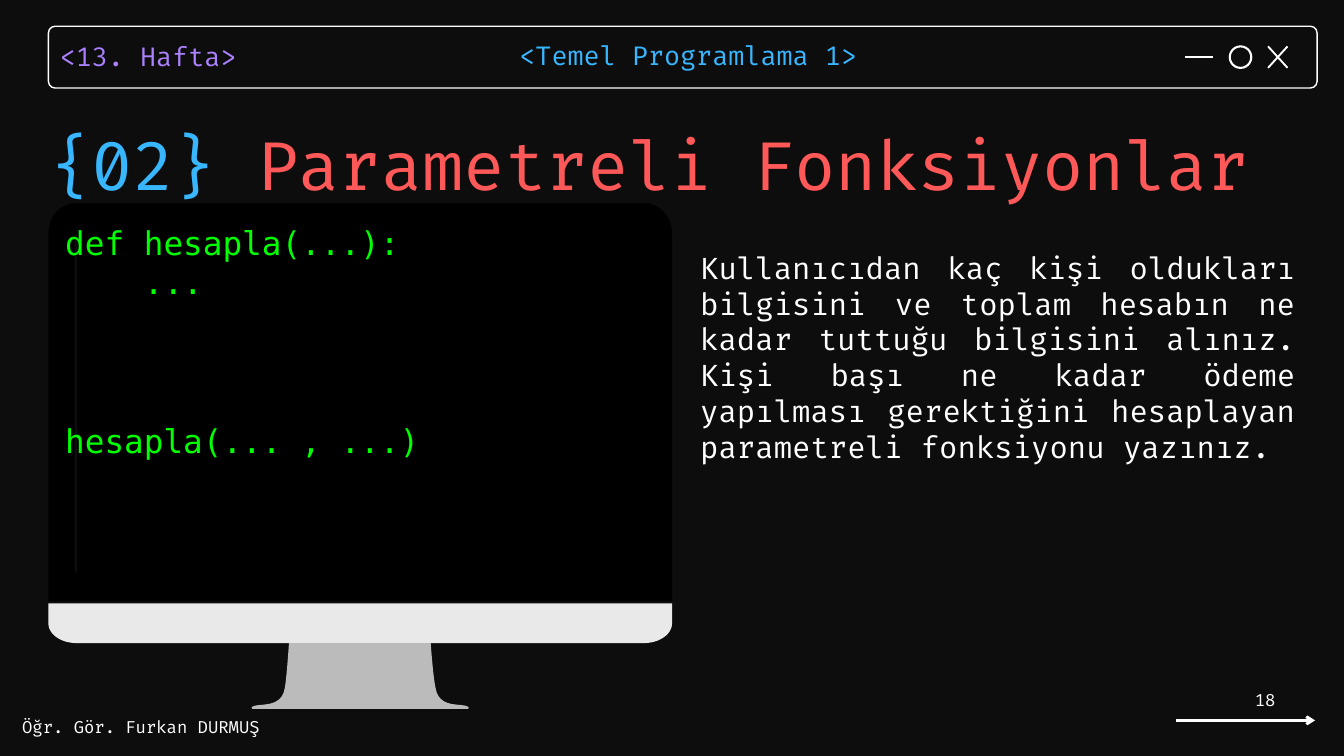
import pptx
import pptx.dml.color
import pptx.enum.shapes
import pptx.enum.text
import pptx.oxml
import pptx.oxml.ns
import pptx.util

Inches = pptx.util.Inches
Pt = pptx.util.Pt
RGBColor = pptx.dml.color.RGBColor
Shape = pptx.enum.shapes.MSO_SHAPE
Align = pptx.enum.text.PP_ALIGN
Anchor = pptx.enum.text.MSO_ANCHOR

NIGHT = RGBColor(0x0D, 0x0D, 0x0D)
BLACK = RGBColor(0, 0, 0)
WHITE = RGBColor(0xFF, 0xFF, 0xFF)
PURPLE = RGBColor(0xAB, 0x81, 0xFF)
BLUE = RGBColor(0x38, 0xB6, 0xFF)
RED = RGBColor(0xFF, 0x58, 0x58)
GREEN = RGBColor(0, 0xFF, 0)
SILVER = RGBColor(0xE9, 0xE9, 0xE9)
GREY = RGBColor(0xBB, 0xBB, 0xBB)

TEXT_FONT = "Fira Code"
CODE_FONT = "DejaVu Sans Mono"
CURVE_STEPS = 12

BEZEL = [
    [(9.58, 3.02), (1.14, 3.02), (0.91, 3.02, 0.72, 3.22, 0.72, 3.47),
     (0.72, 8.95), (10, 8.95), (10, 3.47), (10, 3.22, 9.81, 3.02, 9.58, 3.02)],
    [(9.6, 8.52), (1.11, 8.52), (1.11, 3.49), (9.6, 3.49)],
]
CHIN = [
    [(0.72, 9.28), (0.72, 9.44, 0.91, 9.57, 1.14, 9.57), (9.58, 9.57),
     (9.81, 9.57, 10, 9.44, 10, 9.28), (10, 8.98), (0.72, 8.98)],
]
STAND = [
    [(6.41, 9.57), (4.3, 9.57), (4.3, 9.57, 4.27, 10.03, 4.24, 10.23),
     (4.19, 10.56, 3.85, 10.45, 3.75, 10.52),
     (3.74, 10.53, 3.75, 10.55, 3.76, 10.55), (6.96, 10.55),
     (6.97, 10.55, 6.98, 10.53, 6.97, 10.52),
     (6.87, 10.45, 6.53, 10.56, 6.48, 10.23),
     (6.44, 10.03, 6.41, 9.57, 6.41, 9.57)],
]


def place(box, left, top, width, height):
    box.left, box.top = Inches(left), Inches(top)
    box.width, box.height = Inches(width), Inches(height)


def prepare_frame(box, inset=0, anchor=Anchor.TOP):
    frame = box.text_frame
    frame.word_wrap = True
    frame.auto_size = pptx.enum.text.MSO_AUTO_SIZE.NONE
    frame.vertical_anchor = anchor
    frame.margin_left = frame.margin_right = Inches(inset)
    frame.margin_top = frame.margin_bottom = Inches(inset / 2)
    return frame


def add_run(para, text, size, color, font=TEXT_FONT):
    span = para.add_run()
    span.text = text
    span.font.name = font
    span.font.size = Pt(size)
    span.font.color.rgb = color


def add_label(page, area, text, size, color, line_spacing=None):
    box = page.shapes.add_textbox(*map(Inches, area))
    para = prepare_frame(box).paragraphs[0]
    para.line_spacing = line_spacing
    add_run(para, text, size, color)


def add_panel(page, kind, area, fill=None, line=WHITE, width=1.5):
    panel = page.shapes.add_shape(kind, *map(Inches, area))
    panel.shadow.inherit = False
    if fill is None:
        panel.fill.background()
    else:
        panel.fill.solid()
        panel.fill.fore_color.rgb = fill
    panel.line.color.rgb = line
    panel.line.width = Pt(width)
    return panel


def add_stroke(page, ends, width=2, arrow=False):
    stroke = page.shapes.add_connector(
        pptx.enum.shapes.MSO_CONNECTOR.STRAIGHT, *map(Inches, ends))
    stroke.line.color.rgb = WHITE
    stroke.line.width = Pt(width)
    properties = stroke._element.spPr
    if arrow:
        head = pptx.oxml.parse_xml(
            f'<a:tailEnd {pptx.oxml.ns.nsdecls("a")} type="arrow"/>')
        properties.find(pptx.oxml.ns.qn("a:ln")).append(head)
    properties.append(pptx.oxml.parse_xml(
        f'<a:effectLst {pptx.oxml.ns.nsdecls("a")}/>'))


def trace(contour):
    points = [contour[0]]
    for step in contour[1:]:
        if len(step) == 2:
            points.append(step)
            continue
        start, first, second, end = points[-1], step[:2], step[2:4], step[4:]
        for index in range(1, CURVE_STEPS + 1):
            t = index / CURVE_STEPS
            weights = ((1 - t) ** 3, 3 * t * (1 - t) ** 2, 3 * t * t * (1 - t), t ** 3)
            points.append(tuple(
                sum(weight * value for weight, value in zip(weights, values))
                for values in zip(start, first, second, end)))
    return [(Inches(x), Inches(y)) for x, y in points]


def add_outline(page, contours, color):
    start, *rest = trace(contours[0])
    builder = page.shapes.build_freeform(*start)
    builder.add_line_segments(rest, close=True)
    for contour in contours[1:]:
        start, *rest = trace(contour)
        builder.move_to(*start)
        builder.add_line_segments(rest, close=True)
    outline = builder.convert_to_shape()
    outline.shadow.inherit = False
    outline.fill.solid()
    outline.fill.fore_color.rgb = color
    outline.line.fill.background()


def add_header(page):
    bar = add_panel(page, Shape.ROUNDED_RECTANGLE, (0.72, 0.39, 18.88, 0.92))
    bar.adjustments[0] = 0.11
    add_label(page, (0.89, 0.52, 3.4, 0.53), "<13. Hafta>", 28, PURPLE, Pt(39.2))
    add_label(page, (7.73, 0.51, 5.29, 0.53), "<Temel Programlama 1>", 28, BLUE, Pt(39.2))
    add_stroke(page, (17.64, 0.85, 18.05, 0.85))
    add_panel(page, Shape.OVAL, (18.3, 0.69, 0.32, 0.32), width=2.25)
    add_stroke(page, (18.87, 0.69, 19.16, 1.01))
    add_stroke(page, (19.16, 0.69, 18.87, 1.01))


def add_monitor(page):
    add_outline(page, BEZEL, BLACK)
    add_outline(page, CHIN, SILVER)
    add_outline(page, STAND, GREY)
    add_panel(page, Shape.RECTANGLE, (1.16, 3.32, 8.53, 5.47), BLACK, BLACK, 2)
    box = page.shapes.add_textbox(*map(Inches, (0.97, 3.32, 8.77, 3.53)))
    frame = prepare_frame(box)
    add_run(frame.paragraphs[0], "def hesapla(...):", 35, GREEN, CODE_FONT)
    add_run(frame.add_paragraph(), "    ...", 35, GREEN, CODE_FONT)
    call = frame.add_paragraph()
    call.space_before = Pt(128)
    add_run(call, "hesapla(... , ...)", 35, GREEN, CODE_FONT)


def fill_title(title):
    place(title, 0.75, 1.61, 19.25, 1.38)
    para = prepare_frame(title).paragraphs[0]
    para.alignment = Align.LEFT
    para.line_spacing = Pt(102.6)
    add_run(para, "{02} ", 72, BLUE)
    add_run(para, "Parametreli Fonksiyonlar", 72, RED)


def fill_body(body):
    place(body, 10.42, 3.71, 8.86, 3.23)
    para = prepare_frame(body).paragraphs[0]
    properties = para._p.get_or_add_pPr()
    properties.set("marL", "0")
    properties.set("indent", "0")
    properties.append(pptx.oxml.parse_xml(
        f'<a:buNone {pptx.oxml.ns.nsdecls("a")}/>'))
    para.alignment = Align.JUSTIFY
    para.space_before = Pt(0)
    add_run(para, "Kullanıcıdan kaç kişi oldukları bilgisini ve toplam hesabın ne "
            "kadar tuttuğu bilgisini alınız. Kişi başı ne kadar ödeme yapılması "
            "gerektiğini hesaplayan parametreli fonksiyonu yazınız.", 32, WHITE)


def add_footer(page):
    add_label(page, (0.33, 10.67, 3.67, 0.3), "Öğr. Gör. Furkan DURMUŞ", 18, WHITE)
    box = page.shapes.add_textbox(*map(Inches, (16.75, 10.21, 2.33, 0.4)))
    para = prepare_frame(box, 0.1, Anchor.MIDDLE).paragraphs[0]
    para.alignment = Align.RIGHT
    add_run(para, "18", 18, WHITE)
    add_stroke(page, (17.5, 10.72, 19.57, 10.72), 3, arrow=True)


def main():
    deck = pptx.Presentation()
    deck.slide_width, deck.slide_height = Inches(20), Inches(11.25)
    page = deck.slides.add_slide(deck.slide_layouts[1])
    page.background.fill.solid()
    page.background.fill.fore_color.rgb = NIGHT
    add_header(page)
    add_monitor(page)
    fill_title(page.shapes.title)
    fill_body(page.placeholders[1])
    add_footer(page)
    deck.save("out.pptx")


if __name__ == "__main__":
    main()
